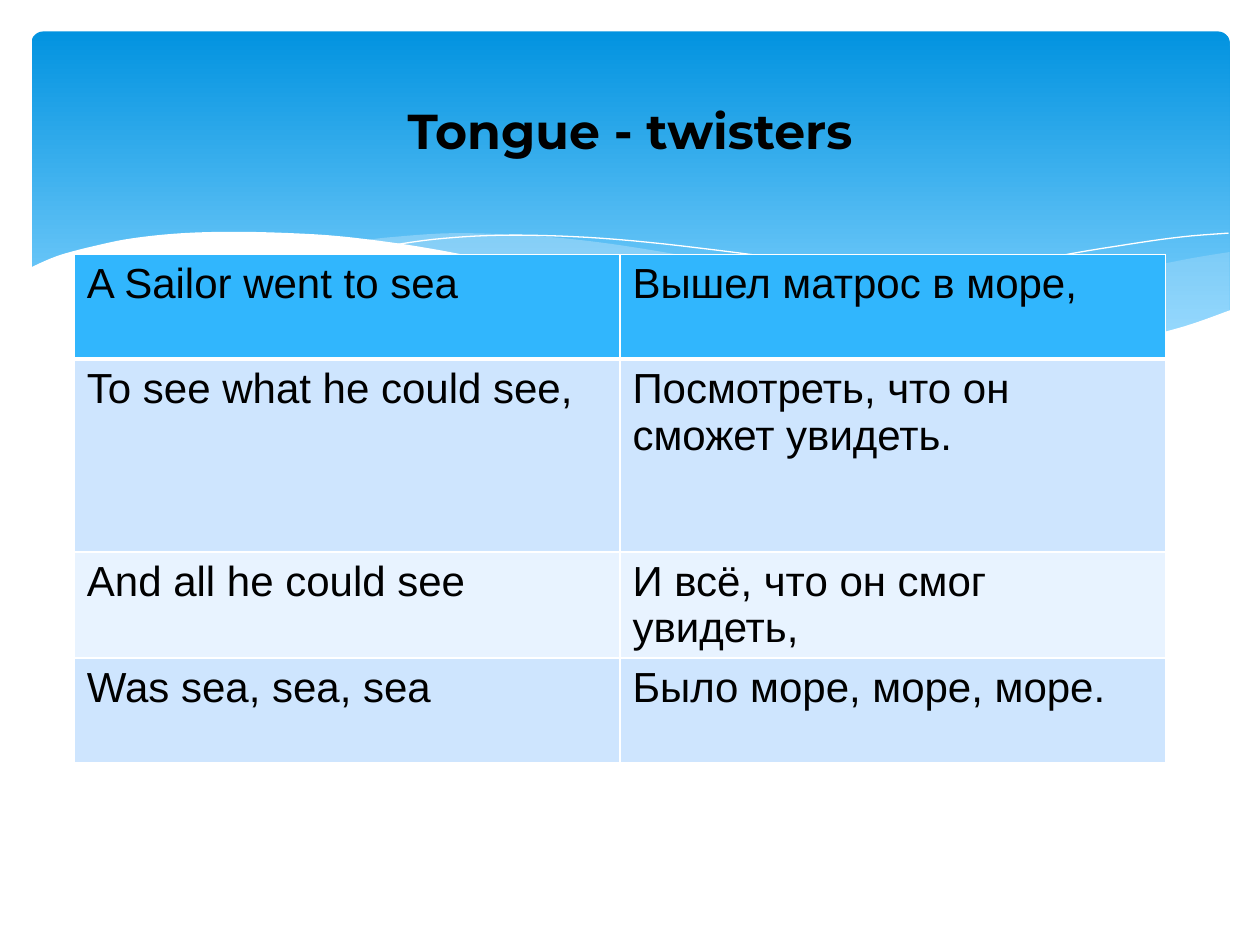
from dataclasses import dataclass
from itertools import product
from typing import Optional

from lxml.etree import SubElement as Sub
from pptx import Presentation
from pptx.dml.color import RGBColor as Rgb
from pptx.enum.shapes import MSO_SHAPE as Shape
from pptx.enum.text import MSO_ANCHOR as Anchor, PP_ALIGN as Align
from pptx.oxml.ns import qn
from pptx.util import Inches, Pt

Point = tuple[float, float]

COLORS = {
    "sky": "0293E0",
    "pale": "83D3FE",
    "mist": "C6E7FC",
    "white": "FFFFFF",
    "black": "000000",
    "head": "31B6FD",
    "odd": "CEE5FE",
    "even": "E8F3FF",
}


@dataclass
class Wave:
    curves: list[list[Point]]
    fill: Optional[str] = None
    alpha: int = 100


@dataclass
class Row:
    left: str
    right: str
    height: float
    fill: str


WAVES = [
    Wave([[(9.76, 2), (9.35, 2.07), (8.61, 2.23), (7.79, 2.42), (7.06, 2.57), (6.61, 2.65)],
          [(6.61, 2.65), (7.05, 2.71), (7.57, 2.76), (8.14, 2.78), (8.63, 2.75),
           (9.13, 2.67), (9.49, 2.57), (9.76, 2.47)]], "mist", 29),
    Wave([[(8.93, 2.73), (8.37, 2.65), (7.75, 2.54), (7.06, 2.4), (6.29, 2.22), (5.69, 2.08),
           (5.14, 1.98), (4.65, 1.91), (4.2, 1.87), (3.61, 1.85), (3.13, 1.88), (2.86, 1.91)],
          [(2.86, 1.91), (3.42, 1.99), (4.04, 2.11), (4.91, 2.32), (5.66, 2.48), (6.34, 2.61),
           (6.95, 2.7), (7.48, 2.76), (8.07, 2.78), (8.57, 2.77), (8.93, 2.73)]], "mist", 40),
    Wave([[(3.09, 1.95), (3.44, 1.9), (3.87, 1.87), (4.33, 1.87), (4.89, 1.9), (5.56, 1.97),
           (6.36, 2.08), (7.27, 2.26), (8.31, 2.51), (9.07, 2.72)]]),
    Wave([[(6.13, 2.57), (6.72, 2.41), (7.48, 2.23), (8.36, 2.04), (8.95, 1.94), (9.38, 1.88),
           (9.75, 1.85)]]),
    Wave([[(9.77, 2.46), (9.4, 2.59), (8.99, 2.69), (8.5, 2.75), (8.09, 2.77), (7.61, 2.75),
           (7.08, 2.7), (6.48, 2.62), (5.79, 2.5), (5.03, 2.33), (4.47, 2.2), (3.91, 2.07),
           (3.4, 1.97), (2.92, 1.9), (2.5, 1.86), (1.93, 1.84), (1.46, 1.85), (1.06, 1.89),
           (0.76, 1.95), (0.46, 2.03), (0.23, 2.13)],
          [(0.23, 3.29), (9.77, 3.29)]], "white"),
]

ROWS = [
    Row("A Sailor went to sea", "Вышел матрос в море,", 0.83, "head"),
    Row("To see what he could see,", "Посмотреть, что он сможет увидеть.", 1.53, "odd"),
    Row("And all he could see", "И всё, что он смог увидеть,", 0.83, "even"),
    Row("Was sea, sea, sea", "Было море, море, море.", 0.83, "odd"),
]


def tint(name: str) -> Rgb:
    return Rgb.from_string(COLORS[name])


def bend(knots: list[Point], steps: int = 5) -> list[Point]:
    if len(knots) < 3:
        return knots
    ends = [knots[0], *knots, knots[-1]]
    spans = zip(ends, ends[1:], ends[2:], ends[3:])
    dots = [
        tuple(
            b + ((c - a) * t + (2 * a - 5 * b + 4 * c - d) * t**2
                 + (3 * b - a - 3 * c + d) * t**3) / 2
            for a, b, c, d in zip(*span)
        )
        for span, t in product(spans, [n / steps for n in range(steps)])
    ]
    return [*dots, knots[-1]]


def draw_wave(slide, wave: Wave) -> None:
    dots = [(Inches(x), Inches(y)) for curve in wave.curves for x, y in bend(curve)]
    pen = slide.shapes.build_freeform(*dots[0])
    pen.add_line_segments(dots[1:], close=wave.fill is not None)
    shape = pen.convert_to_shape()
    shape.shadow.inherit = False
    if wave.fill is None:
        shape.fill.background()
        shape.line.color.rgb = tint("white")
        shape.line.width = Pt(0)
        return
    shape.line.fill.background()
    shape.fill.solid()
    shape.fill.fore_color.rgb = tint(wave.fill)
    if wave.alpha < 100:
        tone = shape._element.spPr.find(f"{qn('a:solidFill')}/{qn('a:srgbClr')}")
        Sub(tone, qn("a:alpha"), val=str(wave.alpha * 1000))


def draw_panel(slide) -> None:
    panel = slide.shapes.add_shape(
        Shape.ROUNDED_RECTANGLE, Inches(0.25), Inches(0.25), Inches(9.51), Inches(2.7))
    panel.adjustments[0] = 0.034
    panel.shadow.inherit = False
    panel.line.fill.background()
    panel.fill.gradient()
    panel.fill.gradient_angle = 270
    for stop, name, place in zip(panel.fill.gradient_stops, ("sky", "pale"), (0, 0.9)):
        stop.color.rgb = tint(name)
        stop.position = place


def set_edges(cell, base: int) -> None:
    props = cell._tc.get_or_add_tcPr()
    for spot, (side, width) in enumerate(zip("LRTB", (1, 1, 1, base))):
        edge = props.makeelement(qn(f"a:ln{side}"), {"w": str(Pt(width))})
        Sub(Sub(edge, qn("a:solidFill")), qn("a:srgbClr"), val=COLORS["white"])
        props.insert(spot, edge)


def draw_table(slide, rows: list[Row]) -> None:
    high = sum(row.height for row in rows)
    table = slide.shapes.add_table(
        len(rows), 2, Inches(0.59), Inches(2.02), Inches(8.66), Inches(high)).table
    for index, row in enumerate(rows):
        table.rows[index].height = Inches(row.height)
        for cell, text in zip(table.rows[index].cells, (row.left, row.right)):
            cell.text = text
            cell.fill.solid()
            cell.fill.fore_color.rgb = tint(row.fill)
            set_font(cell.text_frame.paragraphs[0].font, "Arial", 24, False)
            set_edges(cell, 1 if index else 3)
    for cell in table.rows[1].cells:
        cell._tc.tcPr.find(qn("a:lnT")).set("w", str(Pt(3)))


def set_font(font, name: str, size: int, bold: bool) -> None:
    font.name = name
    font.size = Pt(size)
    font.bold = bold
    font.color.rgb = tint("black")


def draw_title(slide, text: str) -> None:
    frame = slide.shapes.add_textbox(
        Inches(0.5), Inches(0.52), Inches(9), Inches(1.03)).text_frame
    frame.word_wrap = True
    frame.vertical_anchor = Anchor.MIDDLE
    line = frame.paragraphs[0]
    line.text = text
    line.alignment = Align.CENTER
    set_font(line.font, "Montserrat", 28, True)


def main() -> None:
    deck = Presentation()
    deck.slide_width, deck.slide_height = Inches(10), Inches(7.5)
    slide = deck.slides.add_slide(deck.slide_layouts[6])
    draw_panel(slide)
    for wave in WAVES:
        draw_wave(slide, wave)
    draw_table(slide, ROWS)
    draw_title(slide, "Tongue - twisters")
    deck.save("out.pptx")


if __name__ == "__main__":
    main()
